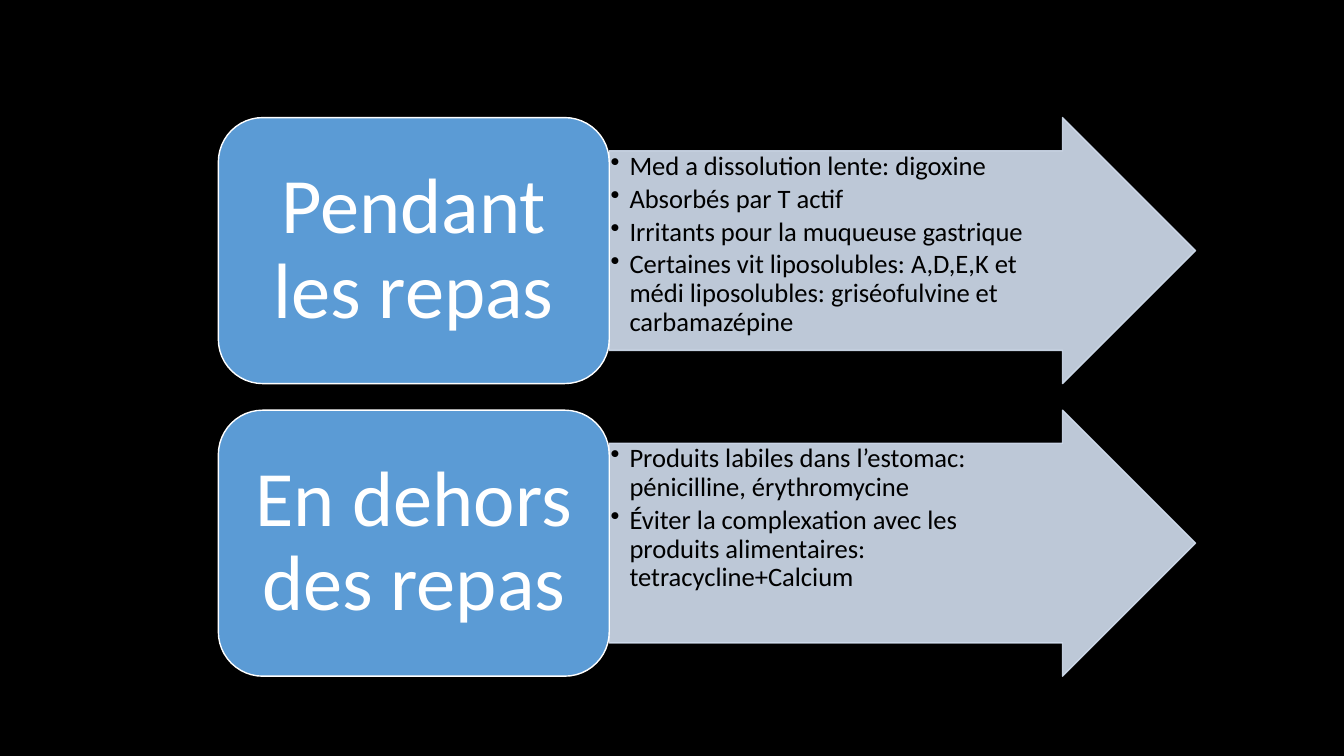
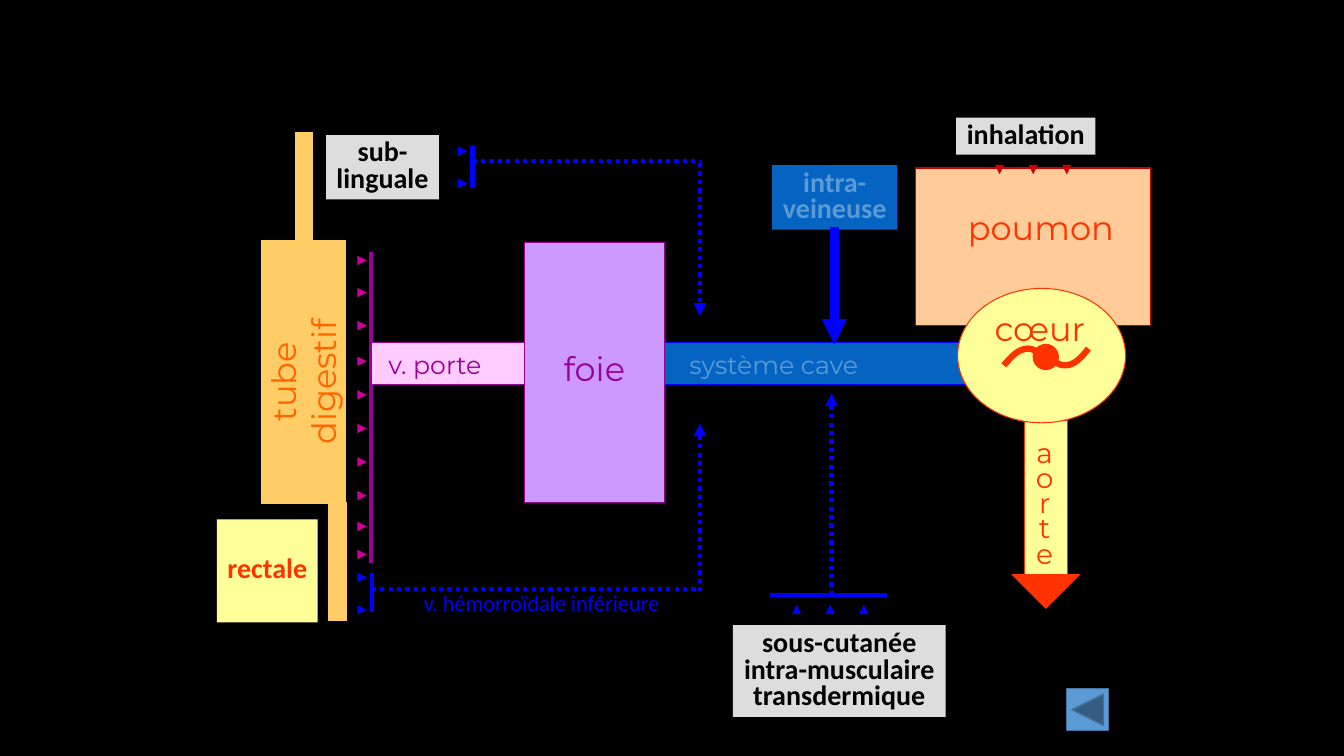
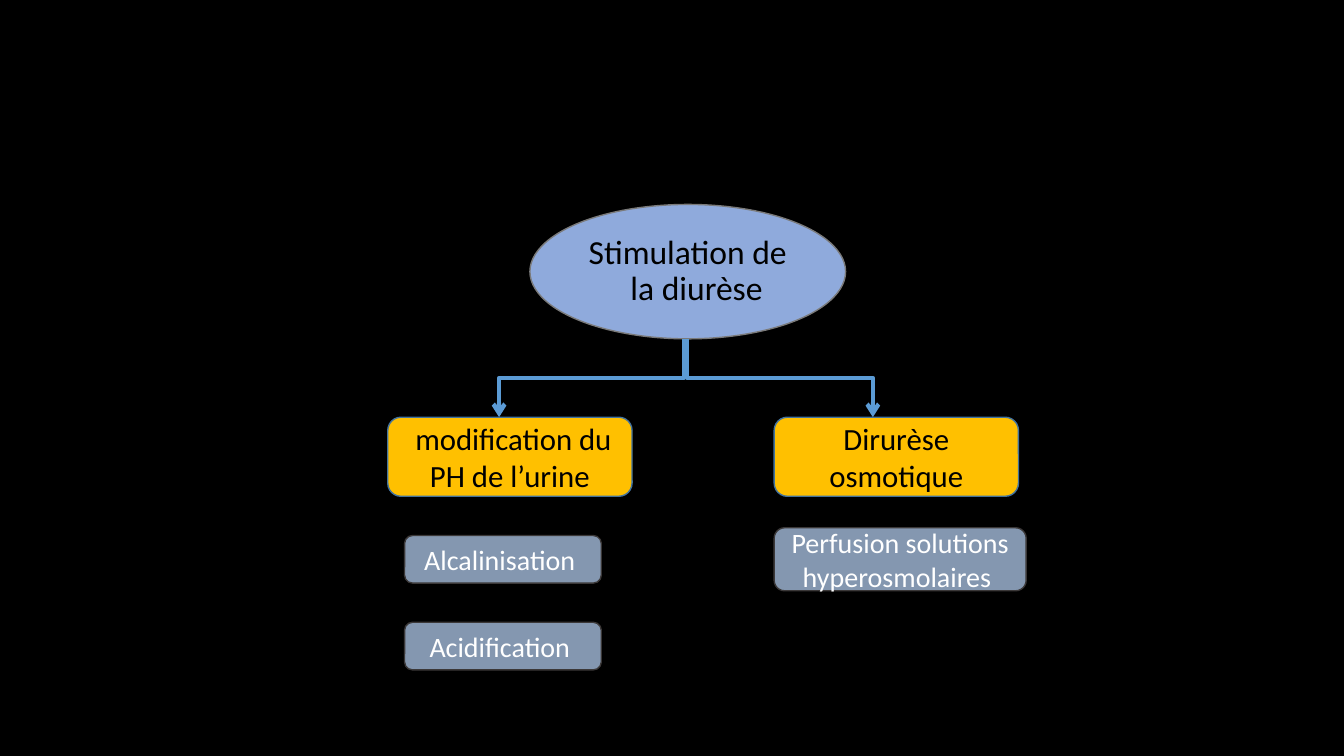
from pptx import Presentation
from pptx.dml.color import RGBColor
from pptx.enum.dml import MSO_LINE
from pptx.enum.shapes import MSO_CONNECTOR, MSO_SHAPE
from pptx.enum.text import MSO_ANCHOR, PP_ALIGN
from pptx.oxml.ns import qn
from pptx.util import Pt
from lxml import etree

RECT, ROUND, OVAL = MSO_SHAPE.RECTANGLE, MSO_SHAPE.ROUNDED_RECTANGLE, MSO_SHAPE.OVAL
ARROW, TRIANGLE = MSO_SHAPE.RIGHT_ARROW, MSO_SHAPE.ISOSCELES_TRIANGLE
BACK = MSO_SHAPE.ACTION_BUTTON_BACK_OR_PREVIOUS
STRAIGHT, ELBOW = MSO_CONNECTOR.STRAIGHT, MSO_CONNECTOR.ELBOW
LEFT, CENTER = PP_ALIGN.LEFT, PP_ALIGN.CENTER
TOP, MIDDLE = MSO_ANCHOR.TOP, MSO_ANCHOR.MIDDLE
DOTTED = MSO_LINE.ROUND_DOT

BODY, ALT = "Calibri", "Montserrat"
INSET = (7.2, 3.6, 7.2, 3.6)
C = {
    "black": "000000", "white": "FFFFFF", "accent": "5B9BD5", "accent_dark": "43739E",
    "pale": "D2DEEF", "grey": "DDDDDD", "blue": "0000FF", "cave": "0563C1",
    "gut": "FFCC66", "gut_text": "FF6600", "purple": "990099", "magenta": "CC0099",
    "porte": "FFCCFF", "liver": "CC99FF", "lung": "FFCC99", "dark_red": "CC0000",
    "red": "FF3300", "yellow": "FFFF99", "oval": "8FAADC", "oval_line": "7A7A7A",
    "amber": "FFC000", "slate": "8497B0", "slate_line": "3B3838",
}


def rgb(name):
    return RGBColor.from_string(C[name])


def new_slide(prs):
    s = prs.slides.add_slide(prs.slide_layouts[6])
    s.background.fill.solid()
    s.background.fill.fore_color.rgb = rgb("black")
    return s


def write(sp, lines, size, color, font=BODY, bold=False, align=CENTER, anchor=MIDDLE,
          spacing=None, inset=INSET, wrap=True):
    """Put one paragraph per line into a shape."""
    tf = sp.text_frame
    tf.text = "\n".join(lines)
    tf.word_wrap = wrap
    tf.vertical_anchor = anchor
    tf.margin_left, tf.margin_top, tf.margin_right, tf.margin_bottom = map(Pt, inset)
    for p in tf.paragraphs:
        p.alignment = align
        if spacing:
            p.line_spacing = spacing
        for r in p.runs:
            r.font.name, r.font.size, r.font.bold = font, Pt(size), bold
            r.font.color.rgb = rgb(color)


def shape(s, kind, x, y, w, h, fill, line=None, width=0.75):
    sp = s.shapes.add_shape(kind, Pt(x), Pt(y), Pt(w), Pt(h))
    sp.shadow.inherit = False
    sp.fill.solid()
    sp.fill.fore_color.rgb = rgb(fill)
    if line:
        sp.line.color.rgb = rgb(line)
        sp.line.width = Pt(width)
    else:
        sp.line.fill.background()
    return sp


def label(s, x, y, w, h, lines, size, color, **style):
    sp = s.shapes.add_textbox(Pt(x), Pt(y), Pt(w), Pt(h))
    write(sp, lines, size, color, wrap=False, **style)
    return sp


def route_label(s, x, y, w, h, lines, fill="grey", color="black"):
    """Filled box naming a route of administration."""
    sp = shape(s, RECT, x, y, w, h, fill)
    write(sp, lines, 20, color, bold=True, spacing=0.8, wrap=False)


def line(s, x1, y1, x2, y2, color, width=3.0, dash=None, head=None, kind=STRAIGHT):
    c = s.shapes.add_connector(kind, Pt(x1), Pt(y1), Pt(x2), Pt(y2))
    c.line.color.rgb = rgb(color)
    c.line.width = Pt(width)
    if dash:
        c.line.dash_style = dash
    if head:
        etree.SubElement(c.line._get_or_add_ln(), qn("a:tailEnd"), type=head)
    etree.SubElement(c.element.spPr, qn("a:effectLst"))
    return c


def ticks(s, starts, dx, dy, color):
    """Row of short arrows, all with the same direction."""
    for x, y in starts:
        line(s, x, y, x + dx, y + dy, color, 2.25, head="triangle")


def elbow(s, x1, y1, x2, y2, color):
    """Connector that leaves downwards: a sideways elbow turned by a quarter."""
    cx, cy = (x1 + x2) / 2, (y1 + y2) / 2
    half_w, half_h = (y2 - y1) / 2, abs(x2 - x1) / 2
    side = 1 if x2 > x1 else -1
    c = line(s, cx + side * half_w, cy - half_h, cx - side * half_w, cy + half_h,
             color, head="arrow", kind=ELBOW)
    c.element.spPr.find(qn("a:xfrm")).set("rot", str((270 if side > 0 else 90) * 60000))


# Slide 1: meal timing
def timing_row(s, x, y, w, h, title, items):
    title_w = w * 0.4
    arrow = shape(s, ARROW, x + title_w, y, w - title_w, h, "pale", "pale", 1)
    arrow.adjustments[0], arrow.adjustments[1] = 0.75, 0.5
    for clr in arrow.element.spPr.iter(qn("a:srgbClr")):
        etree.SubElement(clr, qn("a:alpha"), val="90000")
    write(arrow, items, 19, "black", align=LEFT, anchor=TOP, spacing=0.9,
          inset=(1, 1, 48, 1))
    for p in arrow.text_frame.paragraphs:
        p.space_after = Pt(3)
        pPr = p._p.get_or_add_pPr()
        pPr.set("marL", str(Pt(13.5)))
        pPr.set("indent", str(-Pt(13.5)))
        etree.SubElement(pPr, qn("a:buChar"), char="•")
    box = shape(s, ROUND, x, y, title_w, h, "accent", "white", 1)
    write(box, [title], 56, "white", spacing=0.9, inset=(16.5, 8.5, 16.5, 8.5))


def meals_slide(prs):
    s = new_slide(prs)
    rows = [
        ("Pendant les repas", [
            "Med a dissolution lente: digoxine",
            "Absorbés par T actif",
            "Irritants pour la muqueuse gastrique",
            "Certaines vit liposolubles: A,D,E,K et médi liposolubles: "
            "griséofulvine et carbamazépine"]),
        ("En dehors des repas", [
            "Produits labiles dans l’estomac: pénicilline, érythromycine",
            "Éviter la complexation avec les produits alimentaires: "
            "tetracycline+Calcium"]),
    ]
    for i, (title, items) in enumerate(rows):
        timing_row(s, 156, 84 + i * 209, 698, 190, title, items)


# Slide 2: routes of administration
def digestive_tract(s, x, y):
    for dx, dy, w, h in [(24, 0, 12.5, 77.5), (0, 77, 60, 188), (48, 264, 12.5, 84.5)]:
        shape(s, RECT, x + dx, y + dy, w, h, "gut", "gut")
    name = label(s, x - 28, y + 145, 114.5, 65.5, ["tube", "digestif"], 24, "gut_text",
                 font=ALT)
    name.rotation = 270
    # Absorption wall
    heights = [91, 114, 137.5, 163, 187, 211, 235, 259, 281, 301]
    ticks(s, [(x + 68.5, y + dy) for dy in heights], 6.5, 0, "magenta")
    line(s, x + 78, y + 85, x + 78, y + 307, "purple")


def vessels_and_liver(s, x, y):
    for dx, w, fill, edge, text, color, indent in [
            (0, 114, "porte", "purple", "v. porte", "purple", 12),
            (165.5, 366, "cave", "blue", "système cave", "accent", 61.5)]:
        sp = shape(s, RECT, x + dx, y, w, 30, fill, edge)
        write(sp, [text], 18, color, font=ALT, align=LEFT, wrap=True,
              inset=(indent, 0, 0, 0))
    liver = shape(s, RECT, x + 109, y - 72, 100, 186, "liver", "purple")
    write(liver, ["foie"], 24, "purple", font=ALT, inset=(0, 0, 0, 6))


def lungs(s, x, y):
    shape(s, RECT, x, y, 168, 112.5, "lung", "dark_red")
    ticks(s, [(x + 60 + i * 24, y - 1) for i in range(3)], 0, 5.5, "dark_red")
    label(s, x + 30, y + 24, 119, 36, ["poumon"], 24, "red", font=ALT)
    route_label(s, x + 29, y - 36, 99.5, 26.5, ["inhalation"])


def bezier(p0, p1, p2, p3, steps=8):
    for i in range(1, steps + 1):
        t = i / steps
        u = 1 - t
        yield tuple(u**3 * a + 3 * u * u * t * b + 3 * u * t * t * c + t**3 * d
                    for a, b, c, d in zip(p0, p1, p2, p3))


def heart(s, x, y):
    # Aorta
    aorta = shape(s, RECT, x + 48, y + 94.5, 30.5, 111, "yellow", "red")
    write(aorta, list("aorte"), 20, "red", font=ALT, spacing=0.75, anchor=TOP,
          inset=(0, 16, 2, 0), wrap=False)
    tip = shape(s, TRIANGLE, x + 39, y + 204.5, 48, 24, "red", "red")
    tip.rotation = 180
    # Heart with its pulse wave
    shape(s, OVAL, x, y, 120, 96, "yellow", "red")
    knots = [(33, 55), (38, 49.5), (43, 43), (50.5, 43), (57.5, 43), (69, 55),
             (76.5, 55), (83.5, 55), (88.5, 49.5), (93.5, 43)]
    points = [q for i in (0, 3, 6) for q in bezier(*knots[i:i + 4])]
    fb = s.shapes.build_freeform(Pt(x + 33), Pt(y + 55))
    fb.add_line_segments([(Pt(x + dx), Pt(y + dy)) for dx, dy in points], close=False)
    wave = fb.convert_to_shape()
    wave.shadow.inherit = False
    wave.fill.background()
    wave.line.color.rgb = rgb("red")
    wave.line.width = Pt(4.5)
    shape(s, OVAL, x + 54, y + 40, 18, 18, "red", "red")
    label(s, x + 18, y + 10, 81.5, 36, ["cœur"], 24, "red", font=ALT)


def side_route(s, x, y, h, tick_ys, duct_y, turn_x, end_y):
    """Wall with ticks, then a dotted duct that turns towards the vena cava."""
    line(s, x, y, x, y + h, "blue")
    ticks(s, [(x - 10, y + dy) for dy in tick_ys], 6.5, 0, "blue")
    line(s, x, y + duct_y, turn_x, y + duct_y, "blue", dash=DOTTED)
    line(s, turn_x, y + duct_y + 1.5, turn_x, end_y, "blue", dash=DOTTED, head="triangle")


def injection_routes(s, x, y):
    # Intravenous
    route_label(s, x + 28, y, 89.5, 46, ["intra-", "veineuse"], "cave", "accent")
    line(s, x + 72.5, y + 44, x + 72.5, y + 128, "blue", 6, head="triangle")
    # Under the skin, into muscle, through the skin
    line(s, x + 26.5, y + 307, x + 110, y + 307, "blue")
    line(s, x + 70.5, y + 307, x + 70.5, y + 163, "blue", dash=DOTTED, head="triangle")
    ticks(s, [(x + 45.5 + i * 24, y + 320) for i in range(3)], 0, -6, "blue")
    route_label(s, x, y + 328.5, 152, 65.5,
                ["sous-cutanée", "intra-musculaire", "transdermique"])


def routes_slide(prs):
    s = new_slide(prs)
    digestive_tract(s, 187, 95)
    vessels_and_liver(s, 265.5, 245)
    lungs(s, 654, 120)
    heart(s, 684, 206)
    # Routes that bypass the liver
    route_label(s, 233, 96.5, 80.5, 46, ["sub-", "linguale"])
    side_route(s, 337.5, 104.5, 30, (3.5, 26.5), 10.5, 500, 225.5)
    route_label(s, 155, 371, 72, 73.5, ["rectale"], "yellow", "red")
    side_route(s, 265.5, 409, 28, (3.5, 26.5), 12, 500, 302.5)
    label(s, 294.5, 417, 185, 26.5, ["v. hémorroïdale inférieure"], 16, "blue")
    injection_routes(s, 523.5, 118)
    shape(s, BACK, 762, 492, 30, 30, "accent", "accent_dark", 1)


# Slide 3: diuresis tree
def node(s, kind, x, y, w, h, fill, edge, text, size, color, spacing=None):
    sp = shape(s, kind, x, y, w, h, fill, edge, 1)
    write(sp, [text], size, color, spacing=spacing)
    return sp


def branch(s, x, y, title, leaves):
    node(s, ROUND, x, y, 174.5, 56.5, "amber", "accent_dark", title, 22, "black")
    for dx, dy, w, h, text in leaves:
        node(s, ROUND, x + dx, y + dy, w, h, "slate", "slate_line", text, 20, "white")


def diuresis_slide(prs):
    s = new_slide(prs)
    root = node(s, OVAL, 378.5, 146, 225.5, 96, "oval", "oval_line",
                "Stimulation de la diurèse ", 24, "black", spacing=0.9)
    pPr = root.text_frame.paragraphs[0]._p.get_or_add_pPr()
    pPr.set("marL", str(Pt(18)))
    pPr.set("indent", str(-Pt(18)))
    elbow(s, 488.5, 242, 356.5, 298, "accent")
    elbow(s, 491, 242, 623.5, 298, "accent")
    branch(s, 277, 298, " modification du PH de l’urine", [
        (12, 84.5, 140.5, 34, "Alcalinisation "),
        (12, 146.5, 140.5, 34, "Acidification ")])
    branch(s, 553, 298, "Dirurèse osmotique", [
        (0, 79, 180, 45, "Perfusion solutions hyperosmolaires ")])


def main():
    prs = Presentation()
    prs.slide_width, prs.slide_height = Pt(960), Pt(540)
    meals_slide(prs)
    routes_slide(prs)
    diuresis_slide(prs)
    prs.save("out.pptx")


if __name__ == "__main__":
    main()
